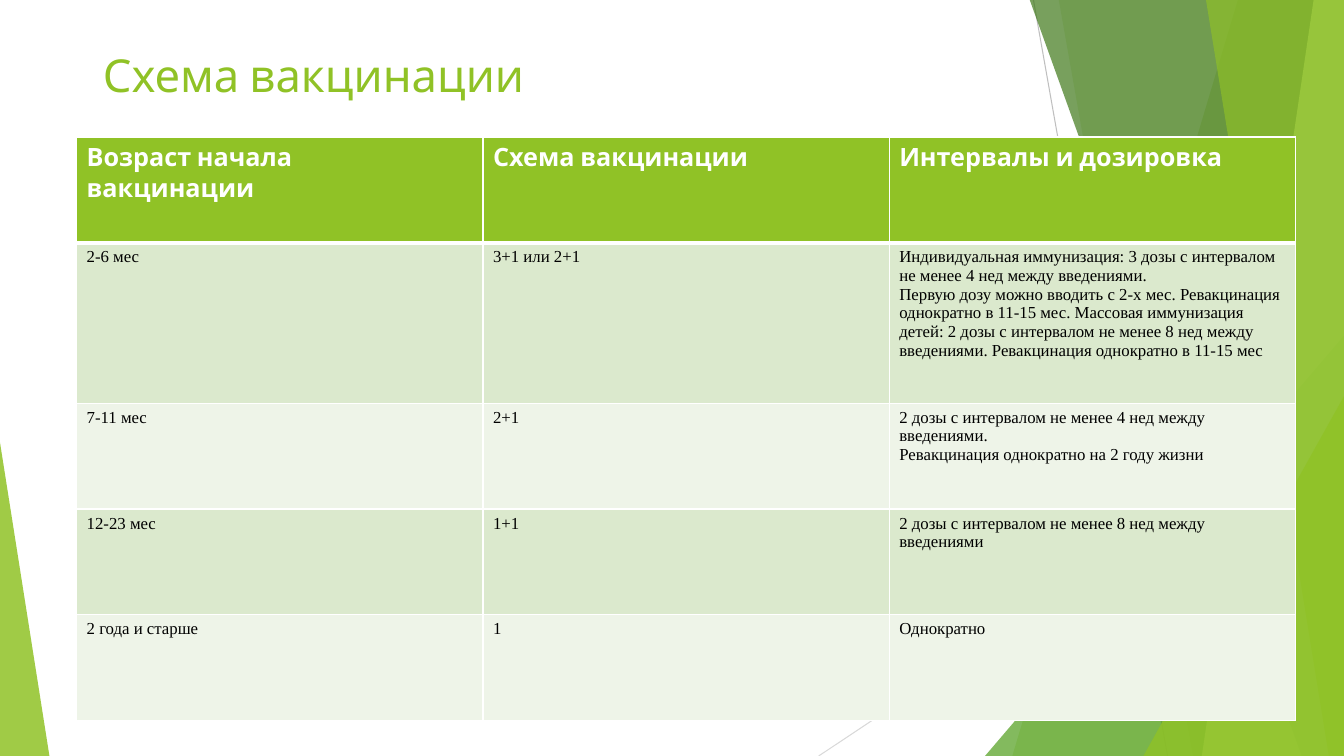
from dataclasses import dataclass

from lxml import etree
from pptx import Presentation
from pptx import util as u
from pptx.dml import color
from pptx.enum import shapes, text
from pptx.oxml import ns


@dataclass(frozen=True)
class Theme:
    """Colours, fonts and type sizes of the slide."""
    green: str = "90C226"
    leaf: str = "54A021"
    forest: str = "3F7819"
    lime: str = "C0E474"
    white: str = "FFFFFF"
    black: str = "000000"
    bands: tuple = ("DBE9CD", "EEF4E8")
    rays: tuple = ("BFBFBF", "D9D9D9")
    heading_font: str = "Cabin"
    body_font: str = "Times New Roman"
    title_size: float = 32.4
    header_size: float = 18
    body_size: float = 12


THEME = Theme()
WIDTH, HEIGHT, TOP = 13.33, 7.5, -0.01

SCHEDULE = (
    ("Возраст начала\nвакцинации", "Схема вакцинации", "Интервалы и дозировка"),
    ("2-6 мес", "3+1 или 2+1",
     "Индивидуальная иммунизация: 3 дозы с интервалом не менее 4 нед между введениями.\n"
     "Первую дозу можно вводить с 2-х мес. Ревакцинация однократно в 11-15 мес. "
     "Массовая иммунизация детей: 2 дозы с интервалом не менее 8 нед между введениями. "
     "Ревакцинация однократно в 11-15 мес"),
    ("7-11 мес", "2+1",
     "2 дозы с интервалом не менее 4 нед между введениями.\n"
     "Ревакцинация однократно на 2 году жизни"),
    ("12-23 мес", "1+1", "2 дозы с интервалом не менее 8 нед между введениями"),
    ("2 года и старше", "1", "Однократно"),
)


def rgb(value):
    """Turn a hex string into a colour."""
    return color.RGBColor.from_string(value)


def format_text(frame, font_name, size, tint, bold=False):
    """Format every run of a text frame."""
    for paragraph in frame.paragraphs:
        paragraph.alignment = text.PP_ALIGN.LEFT
        for run in paragraph.runs:
            run.font.name = font_name
            run.font.size = u.Pt(size)
            run.font.bold = bold
            run.font.color.rgb = rgb(tint)


def paint(facet, tint, opacity):
    """Give a facet a translucent fill without outline or shadow."""
    facet.shadow.inherit = False
    facet.line.fill.background()
    facet.fill.solid()
    facet.fill.fore_color.rgb = rgb(tint)
    swatch = facet.fill._xPr.find(".//" + ns.qn("a:srgbClr"))
    etree.SubElement(swatch, ns.qn("a:alpha"), val=str(opacity * 1000))


def add_ray(slide, start, end, tint):
    """Draw a thin background line."""
    ray = slide.shapes.add_connector(
        shapes.MSO_CONNECTOR.STRAIGHT, *map(u.Inches, start + end))
    ray.line.color.rgb = rgb(tint)
    ray.line.width = u.Pt(0.75)
    etree.SubElement(ray._element.spPr, ns.qn("a:effectLst"))


def add_facet(slide, top_x, bottom_x, tint, opacity):
    """Draw a full-height facet with a slanted left edge."""
    corners = [(u.Inches(x), u.Inches(y)) for x, y in (
        (top_x, TOP), (WIDTH, TOP), (WIDTH, HEIGHT), (bottom_x, HEIGHT))]
    outline = slide.shapes.build_freeform(*corners[0])
    outline.add_line_segments(corners[1:], close=True)
    paint(outline.convert_to_shape(), tint, opacity)


def add_corner(slide, left, top, width, apex, tint, opacity):
    """Draw a right triangle standing on the bottom edge."""
    corner = slide.shapes.add_shape(
        shapes.MSO_SHAPE.ISOSCELES_TRIANGLE,
        *map(u.Inches, (left, top, width, HEIGHT - top)))
    corner.adjustments[0] = apex
    paint(corner, tint, opacity)


def add_backdrop(slide):
    """Draw the rays and facets from back to front."""
    add_ray(slide, (10.25, 0), (11.58, HEIGHT), THEME.rays[0])
    add_ray(slide, (WIDTH, 4.03), (8.12, HEIGHT), THEME.rays[1])
    add_facet(slide, 12.28, 10.04, THEME.green, 30)
    add_facet(slide, 10.5, 11.83, THEME.green, 20)
    add_corner(slide, 9.77, 3.33, 3.56, 1, THEME.leaf, 72)
    add_facet(slide, 10.21, 12.91, THEME.forest, 70)
    add_facet(slide, 13.03, 11.92, THEME.lime, 70)
    add_facet(slide, 11.96, 13.18, THEME.green, 65)
    add_corner(slide, 11.34, 3.93, 1.99, 1, THEME.green, 80)
    add_corner(slide, 0, 4.39, 0.49, 0, THEME.green, 85)


def add_borders(cell, top, bottom):
    """Give a cell white borders, with widths in points."""
    properties = cell._tc.get_or_add_tcPr()
    for side, width in (("L", 1), ("R", 1), ("T", top), ("B", bottom)):
        border = etree.SubElement(
            properties, ns.qn("a:ln" + side), w=str(u.Pt(width)))
        fill = etree.SubElement(border, ns.qn("a:solidFill"))
        etree.SubElement(fill, ns.qn("a:srgbClr"), val=THEME.white)


def fill_cell(cell, wording, row):
    """Write and style one cell of the schedule."""
    header = row == 0
    add_borders(cell, 3 if row == 1 else 1, 3 if header else 1)
    cell.fill.solid()
    cell.fill.fore_color.rgb = rgb(
        THEME.green if header else THEME.bands[(row - 1) % 2])
    cell.text_frame.text = wording
    if header:
        format_text(cell.text_frame, THEME.heading_font, THEME.header_size,
                    THEME.white, True)
    else:
        format_text(cell.text_frame, THEME.body_font, THEME.body_size, THEME.black)


def add_schedule(slide):
    """Add the vaccination table."""
    frame = slide.shapes.add_table(
        len(SCHEDULE), len(SCHEDULE[0]),
        *map(u.Inches, (0.76, 1.36, 12.09, 5.81)))
    schedule = frame.table
    for column in schedule.columns:
        column.width = u.Inches(4.03)
    for row, wordings in enumerate(SCHEDULE):
        schedule.rows[row].height = u.Inches(1.59 if row == 1 else 1.05)
        for column, wording in enumerate(wordings):
            fill_cell(schedule.cell(row, column), wording, row)


def set_title(slide, wording):
    """Place and format the slide title."""
    title = slide.shapes.title
    title.left, title.top, title.width, title.height = map(
        u.Inches, (0.92, 0.4, 11.5, 0.68))
    title.text_frame.text = wording
    title.text_frame.vertical_anchor = text.MSO_ANCHOR.MIDDLE
    format_text(title.text_frame, THEME.heading_font, THEME.title_size, THEME.green)


def main():
    """Build and save the slide."""
    deck = Presentation()
    deck.slide_width, deck.slide_height = u.Inches(WIDTH), u.Inches(HEIGHT)
    slide = deck.slides.add_slide(deck.slide_layouts.get_by_name("Title Only"))
    add_backdrop(slide)
    add_schedule(slide)
    set_title(slide, "Схема вакцинации")
    deck.save("out.pptx")


if __name__ == "__main__":
    main()
